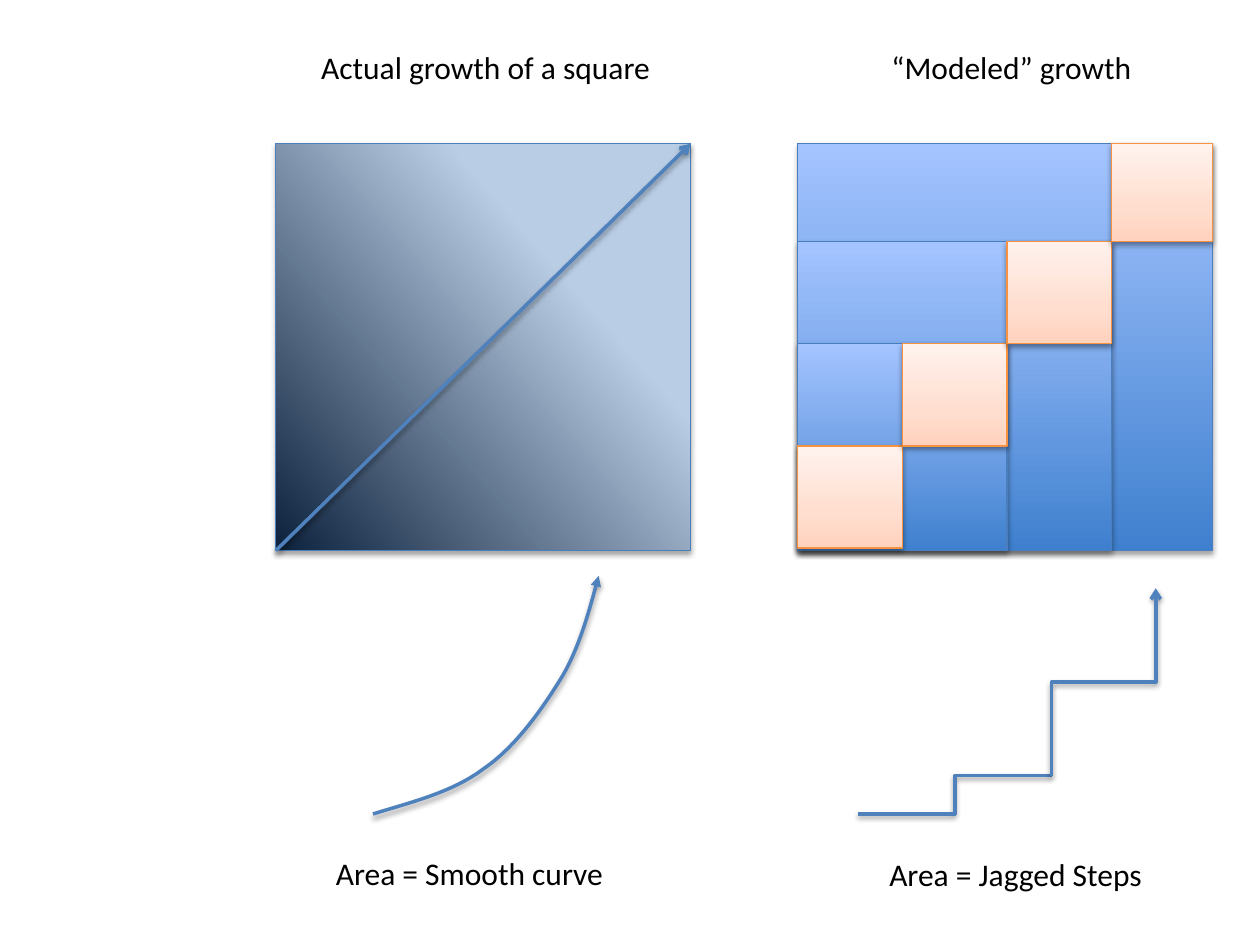
from dataclasses import dataclass

from lxml.etree import SubElement
from pptx import Presentation
from pptx.dml.color import RGBColor
from pptx.enum.shapes import MSO_CONNECTOR as Connector, MSO_SHAPE as Shape
from pptx.enum.text import MSO_ANCHOR as Anchor, MSO_AUTO_SIZE as AutoSize, PP_ALIGN as Align
from pptx.oxml.ns import qn
from pptx.util import Cm, Pt

BLACK = RGBColor(0x00, 0x00, 0x00)
LINE_BLUE = RGBColor(0x4F, 0x81, 0xBD)
EDGE_BLUE = RGBColor(0x4B, 0x7E, 0xBC)
EDGE_ORANGE = RGBColor(0xF6, 0x92, 0x40)
BLUE_STOPS = [(0, RGBColor(0x3F, 0x80, 0xCE)), (100, RGBColor(0xA4, 0xC4, 0xFF))]
ORANGE_STOPS = [(0, RGBColor(0xFF, 0xD2, 0xBD)), (35, RGBColor(0xFF, 0xDE, 0xD0)),
                (100, RGBColor(0xFF, 0xF2, 0xED))]
NAVY_STOPS = [(1, RGBColor(0x0F, 0x24, 0x3E)), (69, RGBColor(0xB9, 0xCD, 0xE5))]

FONT = "Calibri"
COMPARISON_LAYOUT = 4
LEFT_HEADING, RIGHT_HEADING = 1, 3
STEP_WIDTH, STEP_HEIGHT, STEP_COUNT = 2.11, 2.06, 4
BASE_GAP = 0.05
CURVE_POINTS = [(0, 1), (0.17, 0.95), (0.35, 0.91), (0.49, 0.81), (0.63, 0.72),
                (0.75, 0.56), (0.84, 0.42), (0.92, 0.29), (1, 0), (1, 0)]


@dataclass
class Box:
    left: float
    top: float
    width: float
    height: float

    @property
    def right(self):
        return self.left + self.width

    @property
    def bottom(self):
        return self.top + self.height

    def lengths(self):
        return [Cm(value) for value in (self.left, self.top, self.width, self.height)]


def add_soft_shadow(shape, alpha=38, distance=20000):
    properties = shape._element.spPr
    for old in properties.findall(qn("a:effectLst")):
        properties.remove(old)
    effects = SubElement(properties, qn("a:effectLst"))
    shadow = SubElement(effects, qn("a:outerShdw"), blurRad="40000", dist=str(distance),
                        dir="5400000", rotWithShape="0")
    color = SubElement(shadow, qn("a:srgbClr"), val=str(BLACK))
    SubElement(color, qn("a:alpha"), val=str(alpha * 1000))


def style_stroke(shape, arrowhead=None):
    shape.line.color.rgb = LINE_BLUE
    shape.line.width = Pt(2)
    if arrowhead:
        SubElement(shape._element.spPr.find(qn("a:ln")), qn("a:tailEnd"), type=arrowhead)
    add_soft_shadow(shape)


def add_connector(shapes, kind, begin, end, arrowhead=None):
    connector = shapes.add_connector(kind, *[Cm(value) for value in (*begin, *end)])
    style_stroke(connector, arrowhead)
    return connector


def add_gradient_rectangle(shapes, box, stops, edge, angle=90, alpha=35, distance=23000):
    rectangle = shapes.add_shape(Shape.RECTANGLE, *box.lengths())
    rectangle.fill.gradient()
    rectangle.fill.gradient_angle = angle
    stop_list = rectangle._element.spPr.find(".//" + qn("a:gsLst"))
    for old in list(stop_list):
        stop_list.remove(old)
    for position, color in stops:
        stop = SubElement(stop_list, qn("a:gs"), pos=str(position * 1000))
        SubElement(stop, qn("a:srgbClr"), val=str(color))
    rectangle.line.color.rgb = edge
    rectangle.line.width = Pt(0.75)
    add_soft_shadow(rectangle, alpha, distance)


def write_label(shape, box, text):
    shape.left, shape.top, shape.width, shape.height = box.lengths()
    frame = shape.text_frame
    frame.word_wrap = False
    frame.auto_size = AutoSize.SHAPE_TO_FIT_TEXT
    frame.vertical_anchor = Anchor.TOP
    paragraph = frame.paragraphs[0]
    paragraph.alignment = Align.CENTER
    paragraph.space_before = Pt(0)
    run = paragraph.add_run()
    run.text = text
    run.font.name = FONT
    run.font.size = Pt(18)
    run.font.bold = False
    run.font.color.rgb = BLACK


def add_caption(shapes, box, text):
    write_label(shapes.add_textbox(*box.lengths()), box, text)


def add_smooth_square(shapes, box):
    add_gradient_rectangle(shapes, box, NAVY_STOPS, EDGE_BLUE, angle=41)
    add_connector(shapes, Connector.STRAIGHT, (box.left, box.bottom), (box.right, box.top), "arrow")


def add_stepped_square(shapes, box):
    tiles = []
    for index in range(STEP_COUNT):
        left = box.left + index * STEP_WIDTH
        bottom = box.bottom - BASE_GAP - index * STEP_HEIGHT
        top = max(box.top, bottom - STEP_HEIGHT)
        tiles.append(Box(left, top, min(STEP_WIDTH, box.right - left), bottom - top))
    for tile in reversed(tiles[1:]):
        square = Box(box.left, tile.top, tile.right - box.left, box.bottom - tile.top)
        add_gradient_rectangle(shapes, square, BLUE_STOPS, EDGE_BLUE)
    for tile in tiles:
        add_gradient_rectangle(shapes, tile, ORANGE_STOPS, EDGE_ORANGE, alpha=38, distance=20000)


def add_smooth_curve(shapes, box):
    points = [(Cm(box.left + x * box.width), Cm(box.top + y * box.height)) for x, y in CURVE_POINTS]
    builder = shapes.build_freeform(*points[0])
    builder.add_line_segments(points[1:], close=False)
    curve = builder.convert_to_shape()
    outline = curve._element.spPr.find(".//" + qn("a:path"))
    segments = outline.findall(qn("a:lnTo"))
    for start in range(0, len(segments), 3):
        bezier = SubElement(outline, qn("a:cubicBezTo"))
        for segment in segments[start:start + 3]:
            bezier.append(segment[0])
            outline.remove(segment)
    curve.fill.background()
    style_stroke(curve, "triangle")


def add_jagged_steps(shapes, box):
    group = shapes.add_group_shape()
    corner_x, corner_y = box.left + 0.65 * box.width, box.top + 0.83 * box.height
    add_connector(group.shapes, Connector.ELBOW, (box.left, box.bottom), (corner_x, corner_y))
    run, rise = box.right - corner_x, corner_y - box.top
    middle_x, middle_y = corner_x + run / 2, box.top + rise / 2
    upper = add_connector(group.shapes, Connector.ELBOW,
                          (middle_x + rise / 2, middle_y + run / 2),
                          (middle_x - rise / 2, middle_y - run / 2), "arrow")
    upper._element.spPr.find(qn("a:xfrm")).set("rot", "5400000")


def add_actual_growth(slide):
    write_label(slide.placeholders[LEFT_HEADING], Box(6.17, 0.84, 7.24, 1.02),
                "Actual growth of a square")
    add_smooth_square(slide.shapes, Box(5.56, 2.9, 8.36, 8.2))
    add_smooth_curve(slide.shapes, Box(7.52, 11.61, 4.55, 4.8))
    add_caption(slide.shapes, Box(6.48, 17.09, 5.97, 1.02), "Area = Smooth curve")


def add_modeled_growth(slide):
    write_label(slide.placeholders[RIGHT_HEADING], Box(17.7, 0.84, 5.38, 1.02),
                "“Modeled” growth")
    add_stepped_square(slide.shapes, Box(16.08, 2.9, 8.36, 8.2))
    add_jagged_steps(slide.shapes, Box(17.3, 11.86, 6, 4.55))
    add_caption(slide.shapes, Box(17.63, 17.12, 5.69, 1.02), "Area = Jagged Steps")


def main():
    presentation = Presentation()
    presentation.slide_width, presentation.slide_height = Cm(25.4), Cm(19.05)
    slide = presentation.slides.add_slide(presentation.slide_layouts[COMPARISON_LAYOUT])
    add_actual_growth(slide)
    add_modeled_growth(slide)
    for placeholder in list(slide.placeholders):
        if not placeholder.has_text_frame or not placeholder.text_frame.text:
            placeholder._element.getparent().remove(placeholder._element)
    presentation.save("out.pptx")


if __name__ == "__main__":
    main()
